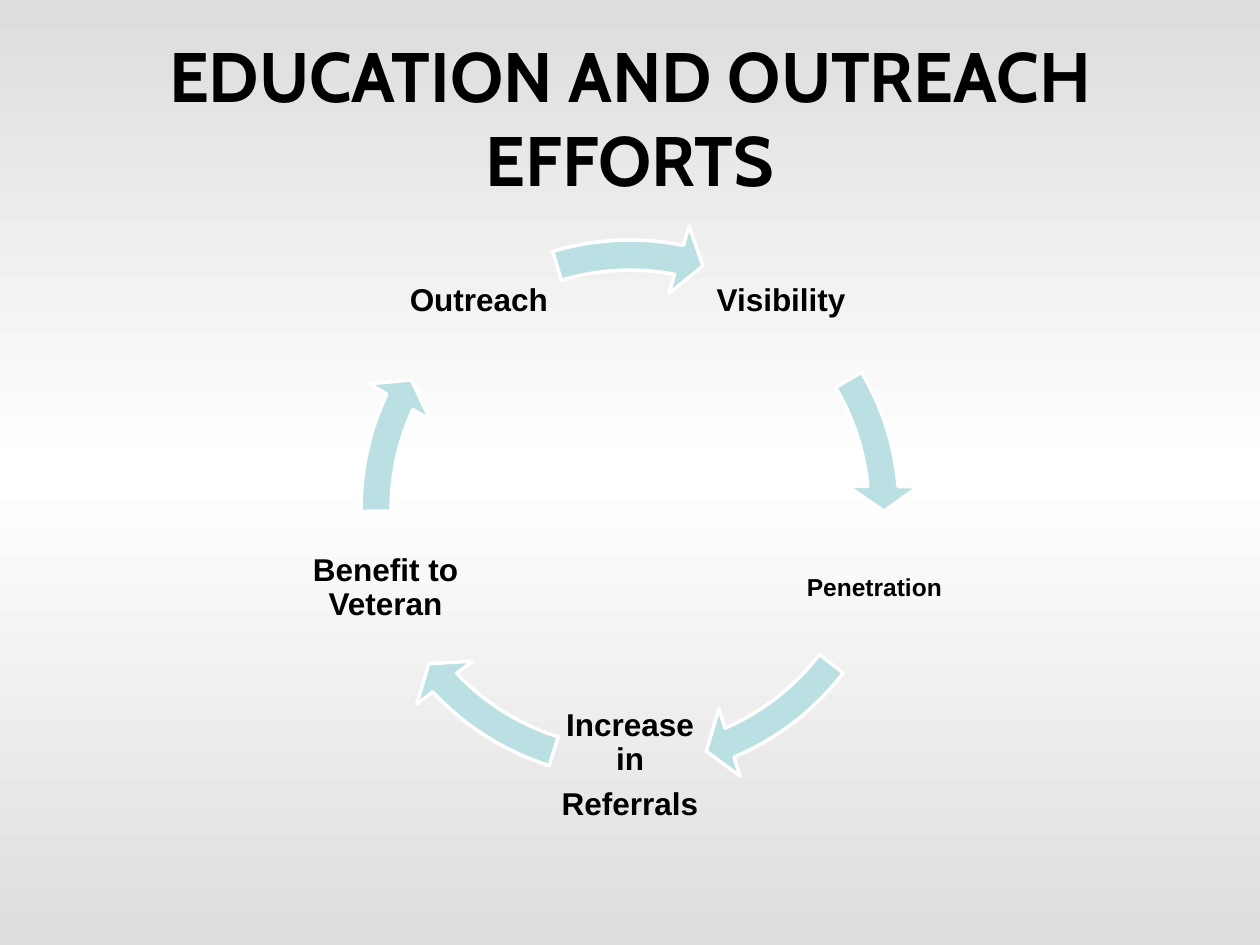
import copy
import math

import pptx
import pptx.dml.color
import pptx.enum.shapes
import pptx.enum.text
import pptx.oxml.ns
import pptx.util
from pptx.util import Inches

BLACK = pptx.dml.color.RGBColor(0x00, 0x00, 0x00)
WHITE = pptx.dml.color.RGBColor(0xFF, 0xFF, 0xFF)
GREY = pptx.dml.color.RGBColor(0xDD, 0xDD, 0xDD)
AQUA = pptx.dml.color.RGBColor(0xBB, 0xE0, 0xE3)

CENTER_X, CENTER_Y = 5, 4.04
LABEL_RADIUS, LABEL_SIZE = 2.04, 1.22
RING_SIZE = 4.59
FIRST_ANGLE = -54
SPACE_AFTER = 0.35

BAND_WIDTH, HEAD_ANGLE, HEAD_WIDTH = 0.052, 3.357, 0.061

STEPS = [
    (["Visibility"], 18, 0.03, 212.94, 197.655),
    (["Penetration"], 14, 0.02, 40.155, 22.527),
    (["Increase in", "Referrals"], 18, 0.03, 82.116, 64.488),
    (["Benefit to Veteran"], 18, 0.03, 122.987, 107.702),
    (["Outreach"], 18, 0.03, 168.665, 151.978),
]


def set_all(target, values):
    """Set each named attribute of target."""
    for name, value in values.items():
        setattr(target, name, value)


def paint_background(page):
    """Fill the page with a vertical grey, white, grey gradient."""
    fill = page.background.fill
    fill.gradient()
    fill.gradient_angle = 270
    stop_list = page.element.find(".//" + pptx.oxml.ns.qn("a:gsLst"))
    stop_list.append(copy.deepcopy(stop_list[0]))
    colors = [(0, GREY), (0.5, WHITE), (1, GREY)]
    for stop, (position, color) in zip(fill.gradient_stops, colors):
        stop.position = position
        stop.color.rgb = color


def add_text(page, area, lines, font, frame_format, para_format):
    """Add a centred, bold text box with one paragraph per line."""
    box = page.shapes.add_textbox(*map(Inches, area))
    frame = box.text_frame
    set_all(frame, {
        "word_wrap": True,
        "vertical_anchor": pptx.enum.text.MSO_ANCHOR.MIDDLE,
        **frame_format,
    })
    frame.text = "\n".join(lines)
    for para in frame.paragraphs:
        set_all(para, {"alignment": pptx.enum.text.PP_ALIGN.CENTER, **para_format})
        set_all(para.font, {"bold": True, **font})
        para.font.color.rgb = BLACK


def add_title(page, title):
    """Add the page title."""
    font = {"name": "Cabin", "size": pptx.util.Pt(40)}
    add_text(page, (0.5, 0.3, 9, 1.25), [title], font, {}, {})


def add_label(page, lines, size, inset, angle):
    """Add a step label at an angle on the cycle."""
    left = CENTER_X + LABEL_RADIUS * math.cos(angle) - LABEL_SIZE / 2
    top = CENTER_Y + LABEL_RADIUS * math.sin(angle) - LABEL_SIZE / 2
    font = {"name": "Arial", "size": pptx.util.Pt(size)}
    sides = ("left", "top", "right", "bottom")
    margins = {f"margin_{side}": Inches(inset) for side in sides}
    spacing = {
        "line_spacing": 0.9,
        "space_after": pptx.util.Pt(size * SPACE_AFTER),
    }
    add_text(page, (left, top, LABEL_SIZE, LABEL_SIZE), lines, font, margins, spacing)


def add_cycle_arrow(page, end, start):
    """Add one curved arrow of the cycle."""
    arrow = page.shapes.add_shape(
        pptx.enum.shapes.MSO_SHAPE.CIRCULAR_ARROW,
        Inches(CENTER_X - RING_SIZE / 2), Inches(CENTER_Y - RING_SIZE / 2),
        Inches(RING_SIZE), Inches(RING_SIZE),
    )
    values = (BAND_WIDTH, HEAD_ANGLE, end, start, HEAD_WIDTH)
    for index, value in enumerate(values):
        arrow.adjustments[index] = value
    arrow.shadow.inherit = False
    arrow.fill.solid()
    arrow.fill.fore_color.rgb = AQUA
    arrow.line.color.rgb = WHITE
    arrow.line.width = pptx.util.Pt(2)


def main():
    """Build the outreach cycle page."""
    deck = pptx.Presentation()
    set_all(deck, {"slide_width": Inches(10), "slide_height": Inches(7.5)})
    page = deck.slides.add_slide(deck.slide_layouts[6])
    paint_background(page)
    add_title(page, "EDUCATION AND OUTREACH EFFORTS")
    for index, (lines, size, inset, end, start) in enumerate(STEPS):
        angle = math.radians(FIRST_ANGLE + index * 360 / len(STEPS))
        add_label(page, lines, size, inset, angle)
        add_cycle_arrow(page, end, start)
    deck.save("out.pptx")


if __name__ == "__main__":
    main()
